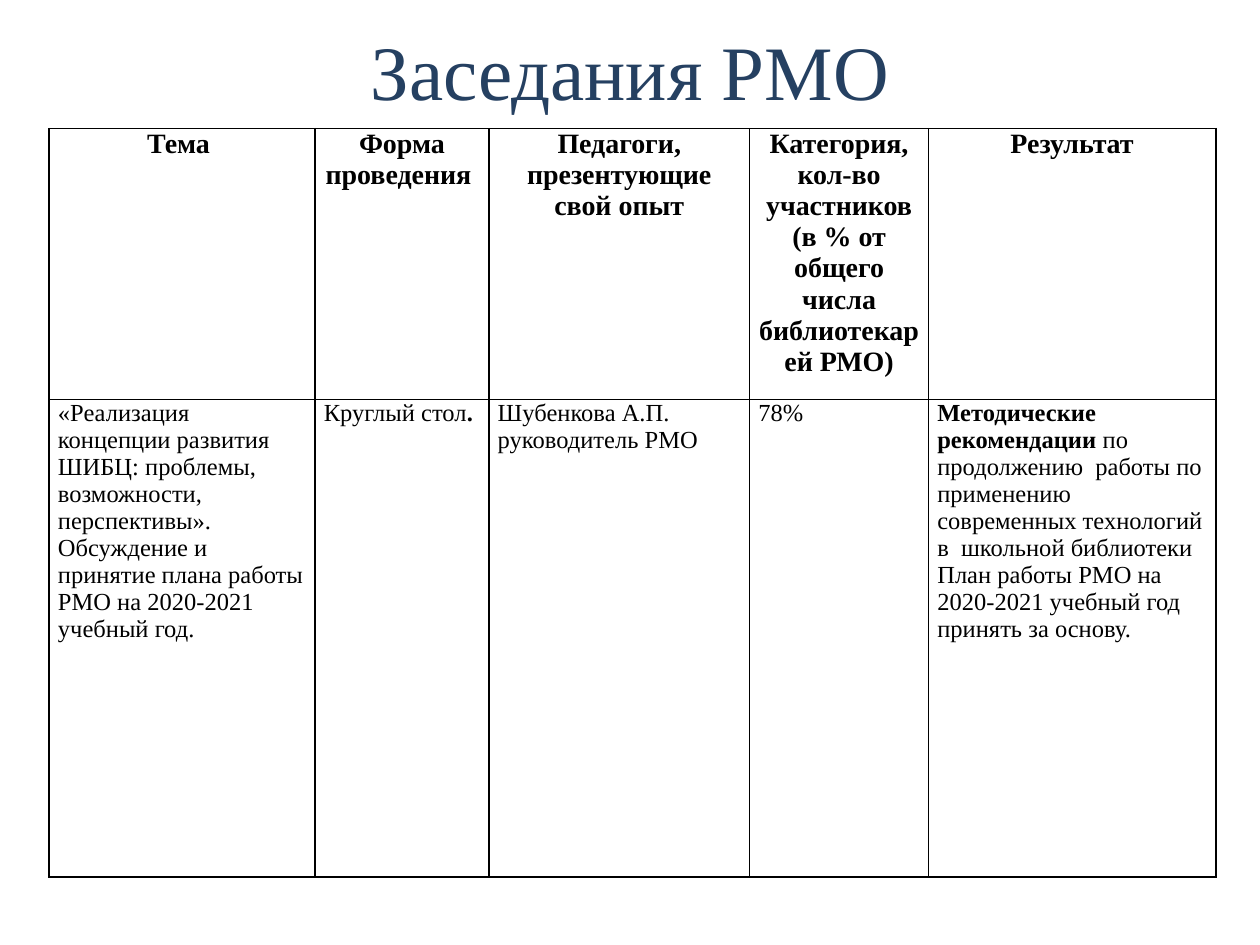
import pptx
import pptx.dml.color
import pptx.enum.text
import pptx.oxml
import pptx.oxml.ns
import pptx.util

Inches = pptx.util.Inches
Pt = pptx.util.Pt
ALIGN = pptx.enum.text.PP_ALIGN

FONT = "Times New Roman"
COLORS = {"title": "254061", "text": "000000", "border": "000000"}
COLUMN_WIDTHS = [2.11, 1.38, 2.07, 1.42, 2.28]
ROW_HEIGHTS = [2.15, 3.79]

# Each cell is a list of paragraphs, each paragraph a list of (text, bold) runs.
HEADINGS = [
    [[("Тема ", True)]],
    [[("Форма проведения ", True)]],
    [[("Педагоги, презентующие свой опыт", True)]],
    [[("Категория, кол-во участников", True)],
     [("(в % от общего числа библиотекарей РМО)", True)]],
    [[("Результат", True)]],
]
MEETING = [
    [[("«Реализация концепции развития ШИБЦ: проблемы, возможности, "
       "перспективы».", False)],
     [("Обсуждение и принятие плана работы РМО на 2020-2021 учебный год.", False)]],
    [[("Круглый стол", False), (".", True)]],
    [[("Шубенкова А.П. руководитель РМО", False)]],
    [[("78%", False)]],
    [[("Методические рекомендации ", True),
      ("по продолжению  работы по применению современных технологий "
       "в  школьной библиотеки", False)],
     [("План работы РМО на 2020-2021 учебный год принять за основу.", False)]],
]
MEETING_ALIGNS = [ALIGN.LEFT, ALIGN.JUSTIFY, ALIGN.LEFT, ALIGN.JUSTIFY, ALIGN.LEFT]


def add_run(paragraph, text, size, color, bold=False):
    run = paragraph.add_run()
    run.text = text
    font_format = {"name": FONT, "size": Pt(size), "bold": bold}
    for attribute, value in font_format.items():
        setattr(run.font, attribute, value)
    run.font.color.rgb = pptx.dml.color.RGBColor.from_string(COLORS[color])


def set_borders(cell, width=1):
    properties = cell._tc.get_or_add_tcPr()
    for position, side in enumerate(("lnL", "lnR", "lnT", "lnB")):
        line = pptx.oxml.parse_xml(
            f'<a:{side} {pptx.oxml.ns.nsdecls("a")} w="{Pt(width)}">'
            f'<a:solidFill><a:srgbClr val="{COLORS["border"]}"/></a:solidFill>'
            f'</a:{side}>')
        properties.insert(position, line)


def fill_cell(cell, paragraphs, size, align):
    cell_format = {
        "margin_left": Inches(0.07), "margin_right": Inches(0.07),
        "margin_top": 0, "margin_bottom": 0,
        "vertical_anchor": pptx.enum.text.MSO_ANCHOR.TOP,
    }
    for attribute, value in cell_format.items():
        setattr(cell, attribute, value)
    cell.fill.background()
    set_borders(cell)
    frame = cell.text_frame
    for index, runs in enumerate(paragraphs):
        paragraph = frame.add_paragraph() if index else frame.paragraphs[0]
        paragraph.alignment = align
        for text, bold in runs:
            add_run(paragraph, text, size, "text", bold)


def set_title(slide, text):
    title = slide.shapes.title
    place = {"left": 0.5, "top": 0.16, "width": 9, "height": 0.78}
    for attribute, value in place.items():
        setattr(title, attribute, Inches(value))
    title.text_frame.vertical_anchor = pptx.enum.text.MSO_ANCHOR.MIDDLE
    paragraph = title.text_frame.paragraphs[0]
    paragraph.alignment = ALIGN.CENTER
    add_run(paragraph, text, 44, "title")


def add_meetings_table(slide):
    meetings = slide.shapes.add_table(
        len(ROW_HEIGHTS), len(COLUMN_WIDTHS), Inches(0.39), Inches(1.02),
        Inches(sum(COLUMN_WIDTHS)), Inches(sum(ROW_HEIGHTS))).table
    meetings.first_row = meetings.horz_banding = False
    for column, width in zip(meetings.columns, COLUMN_WIDTHS):
        column.width = Inches(width)
    for row, height in zip(meetings.rows, ROW_HEIGHTS):
        row.height = Inches(height)
    for index, (heading, content, align) in enumerate(
            zip(HEADINGS, MEETING, MEETING_ALIGNS)):
        fill_cell(meetings.cell(0, index), heading, 16, ALIGN.CENTER)
        fill_cell(meetings.cell(1, index), content, 14, align)


def main():
    presentation = pptx.Presentation()
    presentation.slide_width = Inches(10)
    presentation.slide_height = Inches(7.5)
    slide = presentation.slides.add_slide(presentation.slide_layouts[5])
    set_title(slide, "Заседания РМО")
    add_meetings_table(slide)
    presentation.save("out.pptx")


if __name__ == "__main__":
    main()
